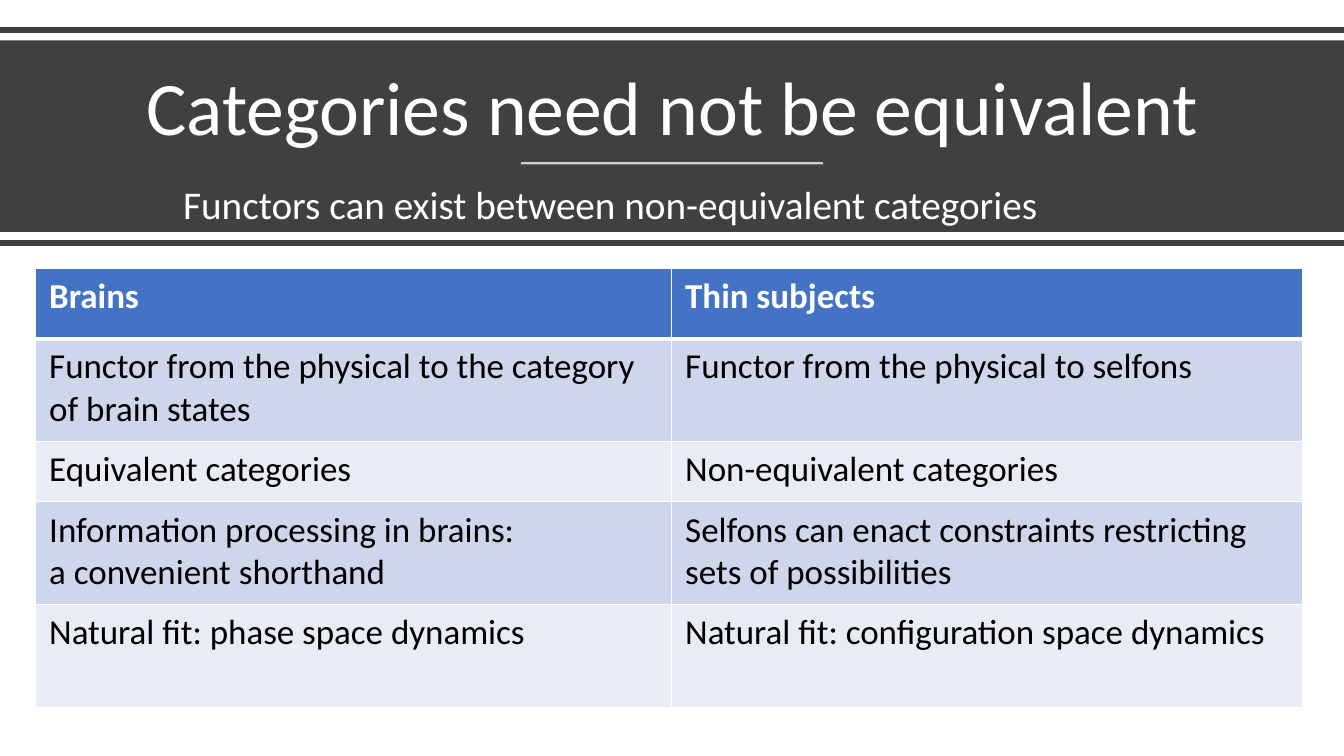
import pptx
import pptx.dml.color
import pptx.enum.shapes
import pptx.enum.text
import pptx.oxml
import pptx.oxml.ns
import pptx.util
from lxml import etree

Pt = pptx.util.Pt
ALIGN = pptx.enum.text.PP_ALIGN
ANCHOR = pptx.enum.text.MSO_ANCHOR
qn = pptx.oxml.ns.qn

SLIDE_W, SLIDE_H = 960, 540
FONT = "Calibri"
COLORS = {
    "white": "FFFFFF",
    "black": "000000",
    "band": "404040",
    "header": "4472C4",
    "odd_row": "CFD5EA",
    "even_row": "E9EBF5",
}
COMPARISON = [
    ("Brains", "Thin subjects"),
    ("Functor from the physical to the category of brain states",
     "Functor from the physical to selfons"),
    ("Equivalent categories", "Non-equivalent categories"),
    ("Information processing in brains:\na convenient shorthand",
     "Selfons can enact constraints restricting sets of possibilities"),
    ("Natural fit: phase space dynamics",
     "Natural fit: configuration space dynamics"),
]
COLUMN_WIDTHS = [454.3, 450.7]
ROW_HEIGHTS = [50.4, 73.4, 43.2, 73.4, 73.4]


def rgb(color):
    return pptx.dml.color.RGBColor.from_string(COLORS[color])


def write(frame, text, size, color, bold=False, align=ALIGN.LEFT,
          line_spacing=None, space_after=None):
    """Fill a text frame, one paragraph for each line of text."""
    for i, line in enumerate(text.split("\n")):
        paragraph = frame.paragraphs[0] if i == 0 else frame.add_paragraph()
        paragraph.alignment = align
        if line_spacing is not None:
            paragraph.line_spacing = line_spacing
        if space_after is not None:
            paragraph.space_after = Pt(space_after)
        run = paragraph.add_run()
        run.text = line
        run.font.name = FONT
        run.font.size = Pt(size)
        run.font.bold = bold
        run.font.color.rgb = rgb(color)


def add_text(slide, box, text, wrap=True, anchor=ANCHOR.TOP, **text_format):
    frame = slide.shapes.add_textbox(*map(Pt, box)).text_frame
    frame.word_wrap = wrap
    frame.vertical_anchor = anchor
    write(frame, text, **text_format)


def add_rule(slide, left, right, y, color, width, opacity=100):
    rule = slide.shapes.add_connector(
        pptx.enum.shapes.MSO_CONNECTOR.STRAIGHT,
        Pt(left), Pt(y), Pt(right), Pt(y))
    rule.line.color.rgb = rgb(color)
    rule.line.width = Pt(width)
    properties = rule._element.spPr
    if opacity < 100:
        tint = properties.find(".//" + qn("a:srgbClr"))
        etree.SubElement(tint, qn("a:alpha"), val=str(opacity * 1000))
    etree.SubElement(properties, qn("a:effectLst"))


def add_title_band(slide, left, top, width, height):
    right = left + width
    center = left + width / 2

    # Dark band between two rules
    add_rule(slide, left, right, top - 7.2, "band", 4)
    band = slide.shapes.add_shape(
        pptx.enum.shapes.MSO_SHAPE.RECTANGLE,
        Pt(left), Pt(top), Pt(width), Pt(height))
    band.shadow.inherit = False
    band.fill.solid()
    band.fill.fore_color.rgb = rgb("band")
    band.line.fill.background()
    add_rule(slide, left, right, top + height + 7.9, "band", 4)

    # Title, divider and subtitle
    add_text(slide, (left + 41.8, top + 10.1, 877, 73.4),
             "Categories need not be equivalent", anchor=ANCHOR.BOTTOM,
             size=54, color="white", align=ALIGN.CENTER, line_spacing=0.9)
    add_rule(slide, center - 108, center + 108, top + 87.8, "white", 1.5,
             opacity=75)
    add_text(slide, (left + 123.8, top + 96.5, 631.4, 41),
             "Functors can exist between non-equivalent categories",
             wrap=False, size=28, color="white", space_after=6)


def add_cell_borders(cell, **widths):
    properties = cell._tc.get_or_add_tcPr()
    for side in "LRTB":
        border = etree.SubElement(properties, qn("a:ln" + side),
                                  w=str(Pt(widths.get(side, 1))))
        fill = etree.SubElement(border, qn("a:solidFill"))
        etree.SubElement(fill, qn("a:srgbClr"), val=COLORS["white"])


def add_comparison(slide, left, top):
    table = slide.shapes.add_table(
        len(COMPARISON), len(COLUMN_WIDTHS), Pt(left), Pt(top),
        Pt(sum(COLUMN_WIDTHS)), Pt(sum(ROW_HEIGHTS))).table
    table.horz_banding = False
    for column, width in zip(table.columns, COLUMN_WIDTHS):
        column.width = Pt(width)

    for r, (texts, height) in enumerate(zip(COMPARISON, ROW_HEIGHTS)):
        table.rows[r].height = Pt(height)
        is_header = r == 0
        fill = "header" if is_header else "odd_row" if r % 2 else "even_row"
        for c, text in enumerate(texts):
            cell = table.cell(r, c)
            cell.margin_left = cell.margin_right = Pt(10)
            cell.margin_top = cell.margin_bottom = Pt(5)
            # A thicker border separates the header from the body
            add_cell_borders(cell, T=3 if r == 1 else 1,
                             B=3 if is_header else 1)
            cell.fill.solid()
            cell.fill.fore_color.rgb = rgb(fill)
            write(cell.text_frame, text, size=25, bold=is_header,
                  color="white" if is_header else "black")


def main():
    deck = pptx.Presentation()
    deck.slide_width, deck.slide_height = Pt(SLIDE_W), Pt(SLIDE_H)
    slide = deck.slides.add_slide(deck.slide_layouts[6])
    add_title_band(slide, 0, 28.8, SLIDE_W, 136.8)
    add_comparison(slide, 25.2, 191.5)
    deck.save("out.pptx")


if __name__ == "__main__":
    main()
